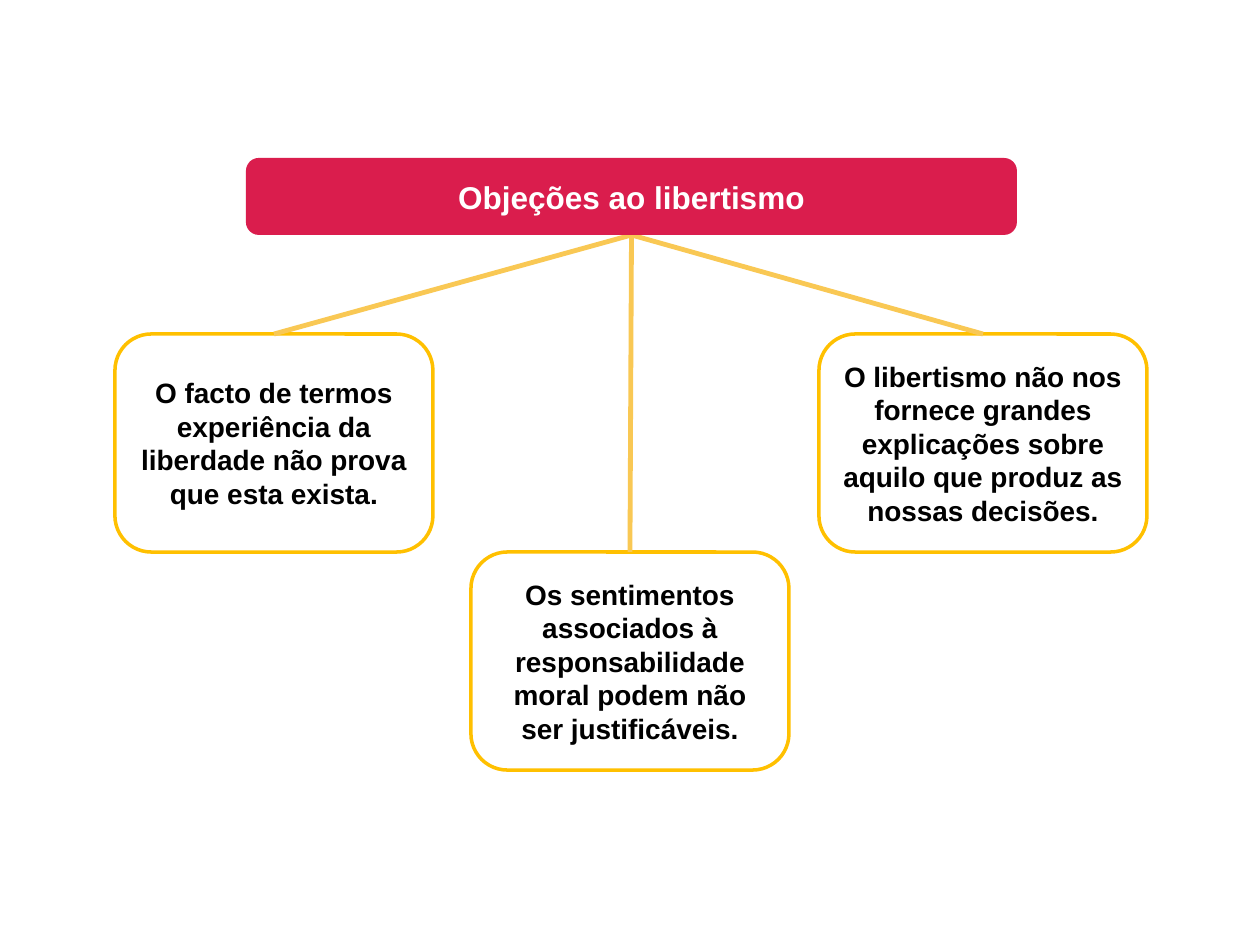
from dataclasses import dataclass
from lxml.etree import SubElement
from pptx import Presentation
from pptx.dml.color import RGBColor
from pptx.enum.shapes import MSO_CONNECTOR, MSO_SHAPE
from pptx.enum.text import MSO_ANCHOR, MSO_AUTO_SIZE, PP_ALIGN
from pptx.oxml.ns import qn
from pptx.util import Pt


@dataclass(frozen=True)
class Theme:
    font: str = "Arial"
    red: RGBColor = RGBColor(0xDA, 0x1D, 0x4D)
    gold: RGBColor = RGBColor(0xFF, 0xC0, 0x00)
    link: RGBColor = RGBColor(0xF9, 0xC8, 0x54)
    black: RGBColor = RGBColor(0, 0, 0)
    white: RGBColor = RGBColor(0xFF, 0xFF, 0xFF)
    head: int = 18
    body: int = 16


theme = Theme()
SCALE = 914400 / 126


def px(*sizes):
    """Turn pixel lengths into EMU."""
    return [round(size * SCALE) for size in sizes]


def write(shape, text, size=theme.body, color=theme.black, bold=True):
    frame = shape.text_frame
    frame.word_wrap = True
    frame.auto_size = MSO_AUTO_SIZE.NONE
    frame.vertical_anchor = MSO_ANCHOR.MIDDLE
    para = frame.paragraphs[0]
    para.text = text
    para.alignment = PP_ALIGN.CENTER
    font = para.font
    font.name, font.size, font.bold = theme.font, Pt(size), bold
    font.color.rgb = color


deck = Presentation()
deck.slide_width, deck.slide_height = px(1260, 945)
slide = deck.slides.add_slide(deck.slide_layouts[5])
shapes = slide.shapes

# Objections: left, width, top, text
WIDE, HIGH, ROW = 318, 218, 334
notes = [
    (115, WIDE, ROW, "O facto de termos experiência da liberdade não prova que esta exista."),
    (819, 328, ROW, "O libertismo não nos fornece grandes explicações sobre aquilo que produz as nossas decisões."),
    (471, WIDE, ROW + HIGH, "Os sentimentos associados à responsabilidade moral podem não ser justificáveis."),
]
boxes = []
for left, width, top, text in notes:
    box = shapes.add_shape(MSO_SHAPE.ROUNDED_RECTANGLE, *px(left, top, width, HIGH))
    box.shadow.inherit = False
    box.fill.background()
    box.line.color.rgb = theme.gold
    box.line.width = Pt(2)
    write(box, text)
    boxes.append(box)

# Heading bar, with the title on top of it
bar = shapes.add_shape(MSO_SHAPE.ROUNDED_RECTANGLE, *px(246, 158, 771, 77))
bar.shadow.inherit = False
bar.fill.solid()
bar.fill.fore_color.rgb = theme.red
bar.line.fill.background()

title = shapes.title
title.left, title.top = bar.left, bar.top
title.width, title.height = bar.width, bar.height
write(title, "Objeções ao libertismo", size=theme.head, color=theme.white)

# Links from the bar to each objection
for box in boxes:
    link = shapes.add_connector(MSO_CONNECTOR.STRAIGHT, 0, 0, 0, 0)
    link.begin_connect(bar, 2)
    link.end_connect(box, 0)
    link.line.color.rgb = theme.link
    link.line.width = Pt(2.75)
    SubElement(link.element.spPr, qn("a:effectLst"))

# Bring the bar, then the title, to the front
link.element.addnext(bar.element)
bar.element.addnext(title.element)

deck.save("out.pptx")
